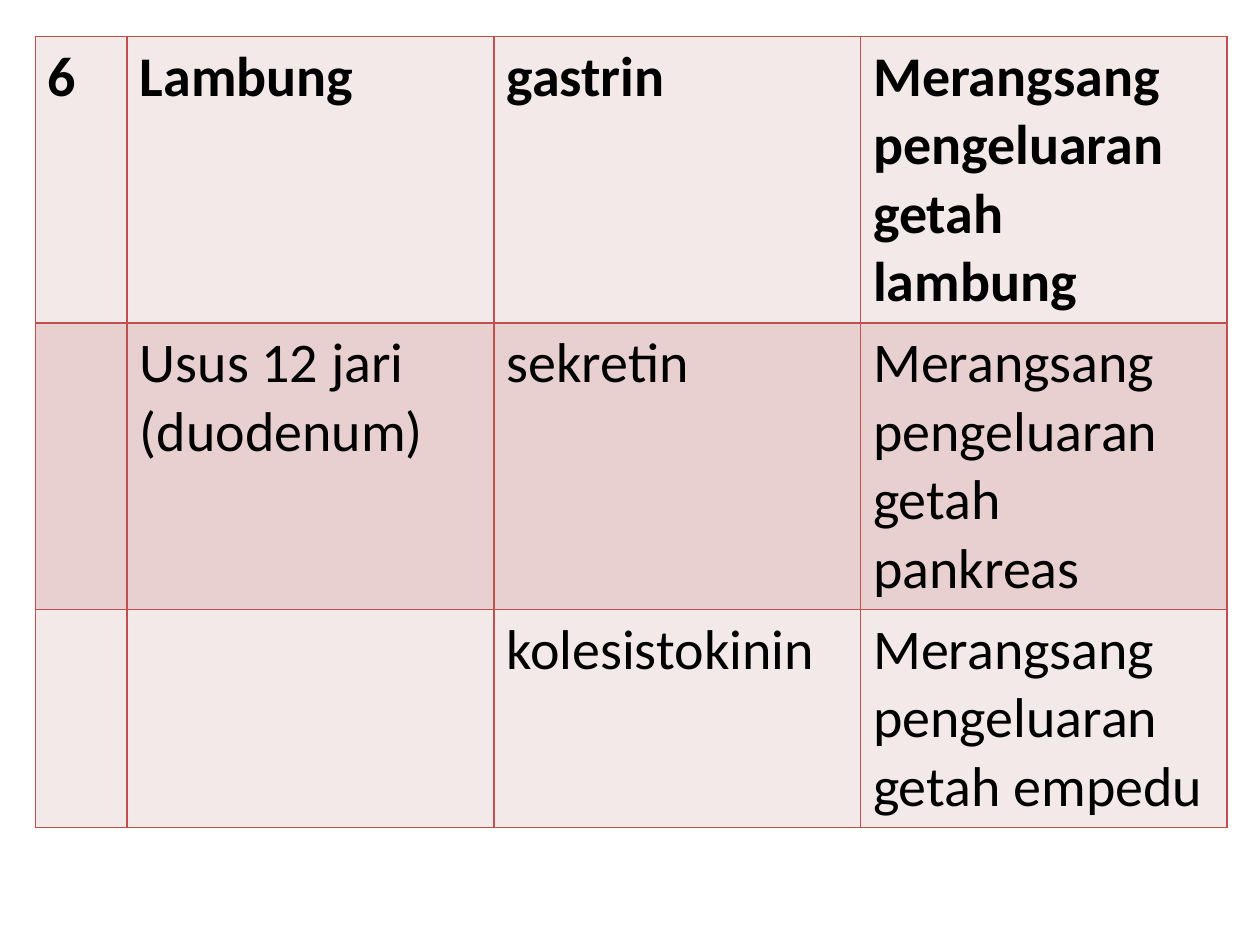
from lxml import etree
from pptx import Presentation
from pptx.dml.color import RGBColor
from pptx.oxml.ns import qn
from pptx.util import Inches, Pt

BLANK_LAYOUT = 6
COLORS = {"text": "000000", "border": "C0504D", "light": "F4E9E9", "dark": "E8D0D0"}
BORDER_SIDES = ("a:lnL", "a:lnR", "a:lnT", "a:lnB")

COLUMN_WIDTHS = (0.73, 2.91, 2.91, 2.91)
ROW_HEIGHTS = (2.27, 2.27, 1.73)
HORMONES = (
    ("6", "Lambung", "gastrin", "Merangsang pengeluaran getah lambung"),
    ("", "Usus 12 jari (duodenum)", "sekretin", "Merangsang pengeluaran getah pankreas"),
    ("", "", "kolesistokinin", "Merangsang pengeluaran getah empedu"),
)


class SlideBuilder:
    font_format = {"name": "Calibri", "size": Pt(32)}
    border_width = Pt(1)

    def __init__(self, deck):
        self.page = deck.slides.add_slide(deck.slide_layouts[BLANK_LAYOUT])

    def table(self, left, top, widths, heights, rows):
        """Draw a banded table whose first row is bold; lengths are inches."""
        frame = self.page.shapes.add_table(
            len(heights), len(widths), Inches(left), Inches(top),
            Inches(sum(widths)), Inches(sum(heights)))
        table = frame.table
        for column, width in zip(table.columns, widths):
            column.width = Inches(width)
        for index, (row, height, texts) in enumerate(zip(table.rows, heights, rows)):
            row.height = Inches(height)
            band = "dark" if index % 2 else "light"
            for cell, text in zip(row.cells, texts):
                self.cell(cell, text, band, bold=index == 0)

    def cell(self, cell, text, band, bold):
        self.borders(cell)
        cell.fill.solid()
        cell.fill.fore_color.rgb = RGBColor.from_string(COLORS[band])
        if not text:
            return
        span = cell.text_frame.paragraphs[0].add_run()
        span.text = text
        for name, value in {**self.font_format, "bold": bold}.items():
            setattr(span.font, name, value)
        span.font.color.rgb = RGBColor.from_string(COLORS["text"])

    def borders(self, cell):
        properties = cell._tc.get_or_add_tcPr()
        for side in BORDER_SIDES:
            line = etree.SubElement(properties, qn(side), w=str(self.border_width))
            fill = etree.SubElement(line, qn("a:solidFill"))
            etree.SubElement(fill, qn("a:srgbClr"), val=COLORS["border"])


def main():
    deck = Presentation()
    deck.slide_width, deck.slide_height = Inches(10), Inches(7.5)
    SlideBuilder(deck).table(0.28, 0.29, COLUMN_WIDTHS, ROW_HEIGHTS, HORMONES)
    deck.save("out.pptx")


if __name__ == "__main__":
    main()
